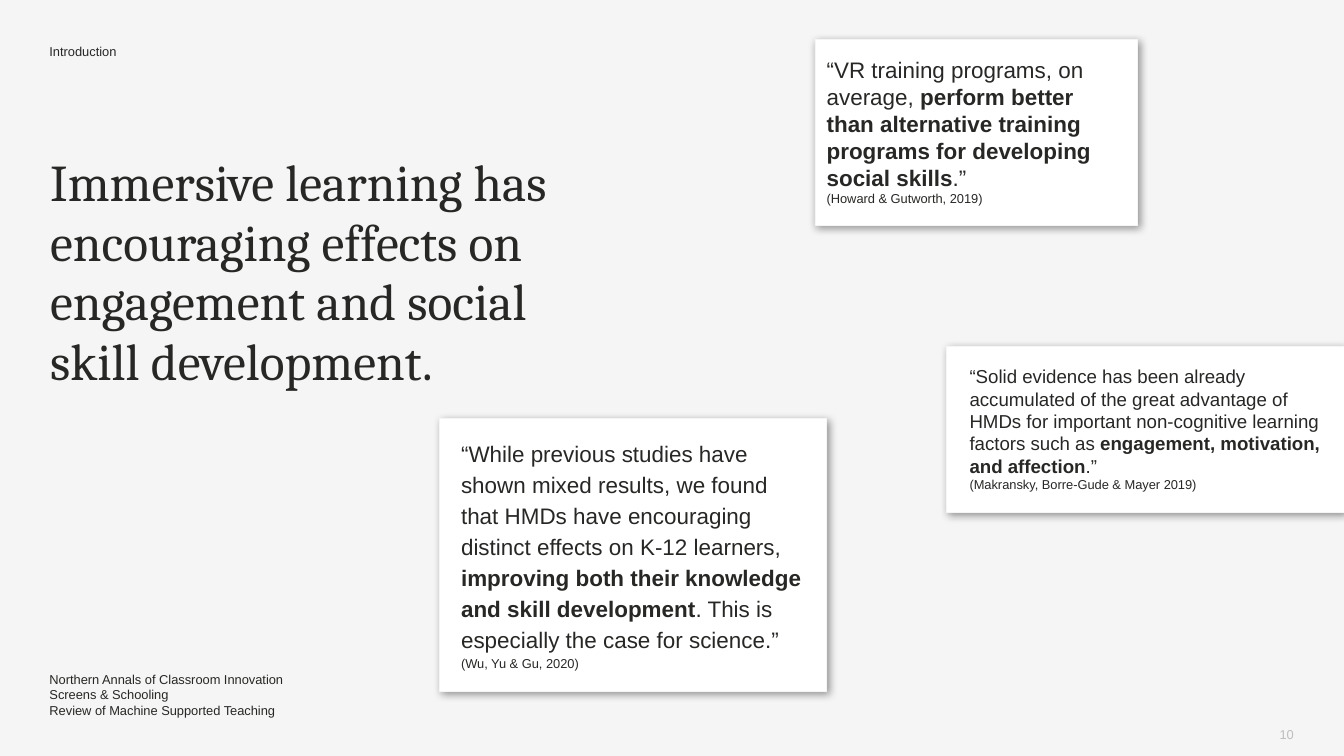
from lxml import etree
from pptx import Presentation
from pptx.dml.color import RGBColor
from pptx.enum.shapes import MSO_SHAPE
from pptx.enum.text import MSO_ANCHOR, MSO_AUTO_SIZE, PP_ALIGN
from pptx.oxml.ns import qn
from pptx.util import Emu, Pt

RECT = MSO_SHAPE.RECTANGLE
TOP, MIDDLE = MSO_ANCHOR.TOP, MSO_ANCHOR.MIDDLE
LEFT, RIGHT = PP_ALIGN.LEFT, PP_ALIGN.RIGHT
NO_FIT = MSO_AUTO_SIZE.NONE

INK = RGBColor(0x27, 0x27, 0x25)
GREY = RGBColor(0xBD, 0xBE, 0xBD)
PAPER = RGBColor(0xF5, 0xF5, 0xF5)
WHITE = RGBColor(0xFF, 0xFF, 0xFF)
SANS, SERIF = "Arial", "Cambria"
SMALL = 13.5
PX = 9144  # EMU per px, 100 px to the inch

# Content
SECTION = "Introduction"
TITLE = ("Immersive learning has encouraging effects on engagement and social "
         "\vskill development.")
JOURNALS = ["Northern Annals of Classroom Innovation",
            "Screens & Schooling",
            "Review of Machine Supported Teaching"]
PAGE = "10"

# Each quote is (text, bold); boxes are left, top, width, height in px
QUOTES = [
    dict(card=(640, 609, 563, 397), text=(671, 635, 501, 344), size=23.5, spacing=1.15,
         quote=[("“While previous studies have shown mixed results, we found that HMDs "
                 "have encouraging distinct effects on K-12 learners, ", False),
                ("improving both their knowledge and skill development", True),
                (". This is especially the case for science.”", False)],
         source="(Wu, Yu & Gu, 2020)"),
    dict(card=(1378, 504, 578, 242), text=(1411, 531, 511, 187), size=19.6, spacing=1.0,
         quote=[("“Solid evidence has been already accumulated of the great advantage of "
                 "HMDs for important non-cognitive learning factors such as ", False),
                ("engagement, motivation, and affection", True),
                (".”", False)],
         source="(Makransky, Borre-Gude & Mayer 2019)"),
    dict(card=(1186, 57, 470, 271), text=(1203, 82, 431, 220), size=23.5, spacing=1.0,
         quote=[("“VR training programs, on average, ", False),
                ("perform better than alternative training programs for developing "
                 "social skills", True),
                (".”", False)],
         source="(Howard & Gutworth, 2019)"),
]


def place(sp, box):
    sp.left, sp.top, sp.width, sp.height = (Emu(v * PX) for v in box)


def setup(sp, anchor=TOP):
    tf = sp.text_frame
    tf.word_wrap = True
    tf.auto_size = NO_FIT
    tf.vertical_anchor = anchor
    tf.margin_left = tf.margin_right = tf.margin_top = tf.margin_bottom = 0
    return tf


def style(p, size, font=SANS, color=INK, align=LEFT):
    p.alignment = align
    for r in p.runs:
        r.font.size = Pt(size)
        r.font.name = font
        r.font.color.rgb = color


def add_text(slide, box):
    return slide.shapes.add_textbox(*(Emu(v * PX) for v in box))


def add_shadow(sp):
    effects = etree.SubElement(sp.fill._xPr, qn("a:effectLst"))
    shadow = etree.SubElement(effects, qn("a:outerShdw"), blurRad=str(Pt(9)),
                              dist=str(Pt(3)), dir=str(45 * 60000),
                              algn="tl", rotWithShape="0")
    color = etree.SubElement(shadow, qn("a:srgbClr"), val="000000")
    etree.SubElement(color, qn("a:alpha"), val="40000")


def add_card(slide, box):
    sp = slide.shapes.add_shape(RECT, *(Emu(v * PX) for v in box))
    sp.fill.solid()
    sp.fill.fore_color.rgb = WHITE
    sp.line.color.rgb = PAPER
    sp.line.width = Pt(0.75)
    add_shadow(sp)


def add_quote(slide, item):
    add_card(slide, item["card"])
    tf = setup(add_text(slide, item["text"]))
    p = tf.paragraphs[0]
    for text, bold in item["quote"]:
        r = p.add_run()
        r.text = text
        r.font.bold = bold
    style(p, item["size"])
    source = tf.add_paragraph()
    source.text = item["source"]
    style(source, SMALL)
    for p in tf.paragraphs:
        p.line_spacing = item["spacing"]


def main():
    prs = Presentation()
    prs.slide_width, prs.slide_height = Emu(1956 * PX), Emu(1100 * PX)
    slide = prs.slides.add_slide(prs.slide_layouts[1])
    slide.background.fill.solid()
    slide.background.fill.fore_color.rgb = PAPER

    # Title
    title = slide.shapes.title
    place(title, (73, 221, 973, 384))
    tf = setup(title)
    tf.text = TITLE
    p = tf.paragraphs[0]
    p.line_spacing = Pt(62.6)
    style(p, 54, SERIF)

    # Journal list, without bullets
    body = slide.placeholders[1]
    place(body, (72, 977, 471, 60))
    tf = setup(body)
    tf.text = "\n".join(JOURNALS)
    for p in tf.paragraphs:
        p.space_before = Pt(0)
        style(p, SMALL)
        pPr = p._p.get_or_add_pPr()
        pPr.set("marL", "0")
        pPr.set("indent", "0")
        etree.SubElement(pPr, qn("a:buNone"))

    # Section name and page number
    tf = setup(add_text(slide, (72, 56, 734, 32)))
    tf.text = SECTION
    tf.paragraphs[0].line_spacing = Pt(21.6)
    style(tf.paragraphs[0], SMALL)
    tf = setup(add_text(slide, (1764, 1049, 119, 39)), MIDDLE)
    tf.text = PAGE
    style(tf.paragraphs[0], SMALL, color=GREY, align=RIGHT)

    # Quote cards
    for item in QUOTES:
        add_quote(slide, item)

    prs.save("out.pptx")


if __name__ == "__main__":
    main()
